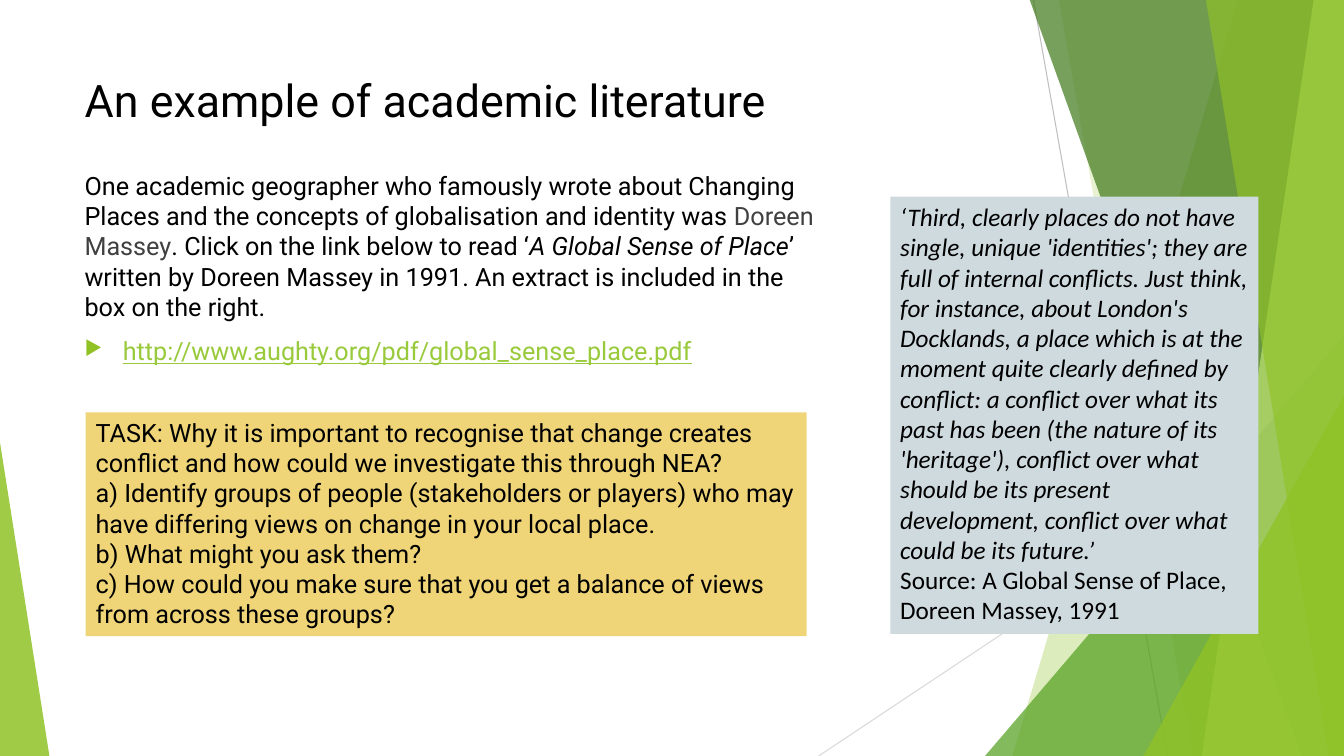
from dataclasses import dataclass

from lxml.etree import SubElement
from pptx import Presentation
from pptx.dml.color import RGBColor
from pptx.enum.shapes import MSO_CONNECTOR, MSO_SHAPE
from pptx.enum.text import MSO_ANCHOR, MSO_AUTO_SIZE, PP_ALIGN
from pptx.oxml.ns import qn
from pptx.util import Inches, Pt


@dataclass(frozen=True)
class Theme:
    """Colours, fonts and type sizes of the slide."""
    black: str = "000000"
    grey: str = "404040"
    light_line: str = "D9D9D9"
    mid_line: str = "BFBFBF"
    green: str = "90C226"
    leaf: str = "54A021"
    forest: str = "3F7819"
    lime: str = "C0E474"
    link: str = "99CA3C"
    quote_fill: str = "CFDADF"
    task_fill: str = "F0D578"
    heading_font: str = "Roboto"
    quote_font: str = "Calibri"
    title_size: int = 32
    text_size: int = 18


THEME = Theme()
WIDTH, HEIGHT = 13.33, 7.5
TOP = -0.01

INTRODUCTION = [
    ("One academic geographer who famously wrote about Changing Places and the "
     "concepts of globalisation and identity was ", THEME.black, False),
    ("Doreen Massey", THEME.grey, False),
    (". Click on the link below to read ‘", THEME.black, False),
    ("A Global Sense of Place", THEME.black, True),
    ("’ written by Doreen Massey in 1991. An extract is included in the box on "
     "the right.", THEME.black, False),
]
LINK = "http://www.aughty.org/pdf/global_sense_place.pdf"
QUOTE = (
    "‘Third, clearly places do not have single, unique 'identities'; they are full "
    "of internal conflicts. Just think, for instance, about London's Docklands, a "
    "place which is at the moment quite clearly defined by conflict: a conflict "
    "over what its past has been (the nature of its 'heritage'), conflict over what "
    "should be its present development, conflict over what could be its future.’"
)
SOURCE = "Source: A Global Sense of Place, Doreen Massey, 1991"
TASKS = [
    "TASK: Why it is important to recognise that change creates conflict and how "
    "could we investigate this through NEA?",
    "a) Identify groups of people (stakeholders or players) who may have differing "
    "views on change in your local place.",
    "b) What might you ask them?",
    "c) How could you make sure that you get a balance of views from across these "
    "groups?",
]


def style_font(font, name, size, color):
    """Set the typeface, size and colour of a font."""
    font.name = name
    font.size = Pt(size)
    font.color.rgb = RGBColor.from_string(color)


def fill_shape(shape, color, opacity=100):
    """Give a shape a flat fill without line or shadow."""
    shape.shadow.inherit = False
    shape.line.fill.background()
    shape.fill.solid()
    shape.fill.fore_color.rgb = RGBColor.from_string(color)
    if opacity < 100:
        color_element = shape.fill._xPr.find(qn("a:solidFill"))[0]
        SubElement(color_element, qn("a:alpha"), val=str(opacity * 1000))


def add_thin_line(slide, start, end, color):
    """Draw a hairline between two points."""
    line = slide.shapes.add_connector(
        MSO_CONNECTOR.STRAIGHT, *(Inches(value) for value in start + end))
    line.line.color.rgb = RGBColor.from_string(color)
    line.line.width = Pt(0.75)
    SubElement(line._element.spPr, qn("a:effectLst"))


def add_band(slide, top_x, bottom_x, color, opacity):
    """Draw a full-height band from a slanted edge to the right slide edge."""
    corners = [(WIDTH, TOP), (WIDTH, HEIGHT), (bottom_x, HEIGHT)]
    builder = slide.shapes.build_freeform(Inches(top_x), Inches(TOP))
    builder.add_line_segments([(Inches(x), Inches(y)) for x, y in corners])
    fill_shape(builder.convert_to_shape(), color, opacity)


def add_corner(slide, left, top, width, apex, color, opacity):
    """Draw a triangle that stands on the bottom slide edge."""
    corner = slide.shapes.add_shape(
        MSO_SHAPE.ISOSCELES_TRIANGLE, Inches(left), Inches(top),
        Inches(width), Inches(HEIGHT - top))
    corner.adjustments[0] = apex
    fill_shape(corner, color, opacity)


def add_backdrop(slide):
    """Draw the green facets from back to front."""
    add_thin_line(slide, (10.25, 0), (11.58, HEIGHT), THEME.mid_line)
    add_thin_line(slide, (WIDTH, 4.03), (8.12, HEIGHT), THEME.light_line)
    add_band(slide, 12.28, 10.04, THEME.green, 30)
    add_band(slide, 10.5, 11.83, THEME.green, 20)
    add_corner(slide, 9.77, 3.33, 3.56, 1, THEME.leaf, 72)
    add_band(slide, 10.21, 12.91, THEME.forest, 70)
    add_band(slide, 13.03, 11.92, THEME.lime, 70)
    add_band(slide, 11.96, 13.18, THEME.green, 65)
    add_corner(slide, 11.34, 3.93, 1.99, 1, THEME.green, 80)
    add_corner(slide, 0, 4.39, 0.49, 0, THEME.green, 85)


def set_title(slide, text):
    """Place and format the title placeholder."""
    title = slide.shapes.title
    title.left, title.top = Inches(0.74), Inches(0.67)
    title.width, title.height = Inches(9.4), Inches(0.95)
    frame = title.text_frame
    frame.text = text
    frame.auto_size = MSO_AUTO_SIZE.NONE
    frame.vertical_anchor = MSO_ANCHOR.TOP
    para = frame.paragraphs[0]
    para.alignment = PP_ALIGN.LEFT
    style_font(para.font, THEME.heading_font, THEME.title_size, THEME.black)


def add_bullet(para):
    """Give a paragraph a green arrow bullet with a hanging indent."""
    properties = para._p.get_or_add_pPr()
    properties.set("marL", str(Inches(0.38)))
    properties.set("indent", str(-Inches(0.38)))
    color = SubElement(properties, qn("a:buClr"))
    SubElement(color, qn("a:srgbClr"), val=THEME.green)
    SubElement(properties, qn("a:buSzPct"), val="80000")
    SubElement(properties, qn("a:buChar"), char="▶")


def add_body(slide):
    """Add the introduction and the address below it."""
    box = slide.shapes.add_textbox(
        Inches(0.74), Inches(1.64), Inches(7.49), Inches(4.97))
    frame = box.text_frame
    frame.word_wrap = True
    introduction = frame.paragraphs[0]
    for text, color, italic in INTRODUCTION:
        span = introduction.add_run()
        span.text = text
        span.font.italic = italic
        style_font(span.font, THEME.heading_font, THEME.text_size, color)
    address = frame.add_paragraph()
    address.space_before = Pt(10)
    add_bullet(address)
    span = address.add_run()
    span.text = LINK
    span.font.underline = True
    style_font(span.font, THEME.heading_font, THEME.text_size, THEME.link)


def add_panel(slide, area, color, font_name, lines):
    """Add a filled box and return its paragraphs."""
    panel = slide.shapes.add_shape(
        MSO_SHAPE.RECTANGLE, *(Inches(value) for value in area))
    fill_shape(panel, color)
    frame = panel.text_frame
    frame.word_wrap = True
    frame.auto_size = MSO_AUTO_SIZE.SHAPE_TO_FIT_TEXT
    frame.vertical_anchor = MSO_ANCHOR.TOP
    frame.text = "\n".join(lines)
    for para in frame.paragraphs:
        para.alignment = PP_ALIGN.LEFT
        style_font(para.font, font_name, THEME.text_size, THEME.black)
    return frame.paragraphs


def main():
    """Build the slide and save the deck."""
    deck = Presentation()
    deck.slide_width, deck.slide_height = Inches(WIDTH), Inches(HEIGHT)
    page = deck.slides.add_slide(deck.slide_layouts.get_by_name("Title Only"))
    add_backdrop(page)
    set_title(page, "An example of academic literature")
    add_body(page)
    quote = add_panel(page, (8.83, 1.95, 3.65, 4.34), THEME.quote_fill,
                      THEME.quote_font, [QUOTE, SOURCE])
    quote[0].font.italic = True
    add_panel(page, (0.85, 4.09, 7.15, 2.22), THEME.task_fill,
              THEME.heading_font, TASKS)
    deck.save("out.pptx")


if __name__ == "__main__":
    main()
